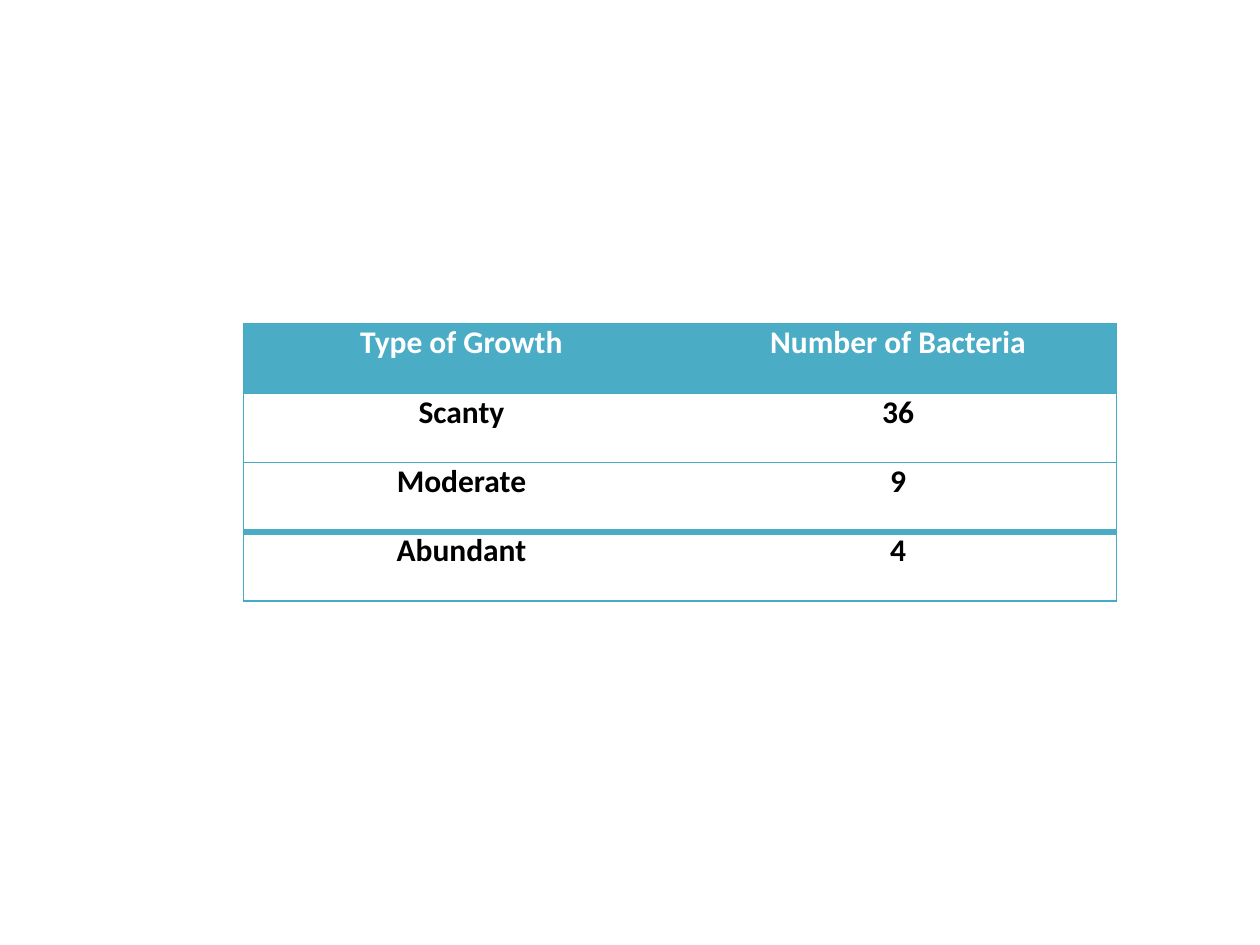
from pptx import Presentation
from pptx.dml.color import RGBColor
from pptx.enum.text import PP_ALIGN
from pptx.oxml import parse_xml
from pptx.oxml.ns import nsdecls
from pptx.util import Inches, Pt

ROWS = [
    ("Type of Growth", "Number of Bacteria"),
    ("Scanty", "36"),
    ("Moderate", "9"),
    ("Abundant", "4"),
]
THEME = {
    "font": "Calibri", "size": 18,
    "head": "4BACC6", "head text": "FFFFFF",
    "body": "FFFFFF", "text": "000000",
}
THIN = ("46AAC5", 0.75)
THICK = ("4BACC6", 4)
LEFT, TOP, WIDE, ROW_H = 1.93, 2.57, 6.93, 0.55


def border(cell, sides):
    """Set the four sides, given as (colour, points) or None for no line."""
    props = cell._tc.get_or_add_tcPr()
    for i, (side, line) in enumerate(zip("LRTB", sides)):
        if line:
            color, width = line
            size = f' w="{Pt(width)}"'
            paint = f'<a:solidFill><a:srgbClr val="{color}"/></a:solidFill>'
        else:
            size, paint = "", "<a:noFill/>"
        tag = f"a:ln{side}"
        props.insert(i, parse_xml(f'<{tag} {nsdecls("a")}{size}>{paint}</{tag}>'))


def style(cell, text, head):
    cell.margin_left = cell.margin_right = Inches(0.07)
    cell.margin_top = cell.margin_bottom = 0
    cell.fill.solid()
    cell.fill.fore_color.rgb = RGBColor.from_string(THEME["head" if head else "body"])
    cell.text_frame.text = text
    para = cell.text_frame.paragraphs[0]
    para.alignment = PP_ALIGN.CENTER
    font = para.runs[0].font
    font.name, font.size, font.bold = THEME["font"], Pt(THEME["size"]), True
    font.color.rgb = RGBColor.from_string(THEME["head text" if head else "text"])


def main():
    deck = Presentation()
    deck.slide_width, deck.slide_height = Inches(10), Inches(7.5)
    slide = deck.slides.add_slide(deck.slide_layouts[6])
    count, cols = len(ROWS), len(ROWS[0])
    table = slide.shapes.add_table(
        count, cols, Inches(LEFT), Inches(TOP), Inches(WIDE), Inches(ROW_H * count)
    ).table
    table.horz_banding = False

    # One line above each row, and one below the last
    rules = [THIN] * (count - 1) + [THICK, THIN]
    for r, row in enumerate(ROWS):
        table.rows[r].height = Inches(ROW_H)
        for c, text in enumerate(row):
            cell = table.cell(r, c)
            style(cell, text, r == 0)
            left = THIN if c == 0 else None
            right = THIN if c == cols - 1 else None
            border(cell, (left, right, rules[r], rules[r + 1]))
    deck.save("out.pptx")


if __name__ == "__main__":
    main()
